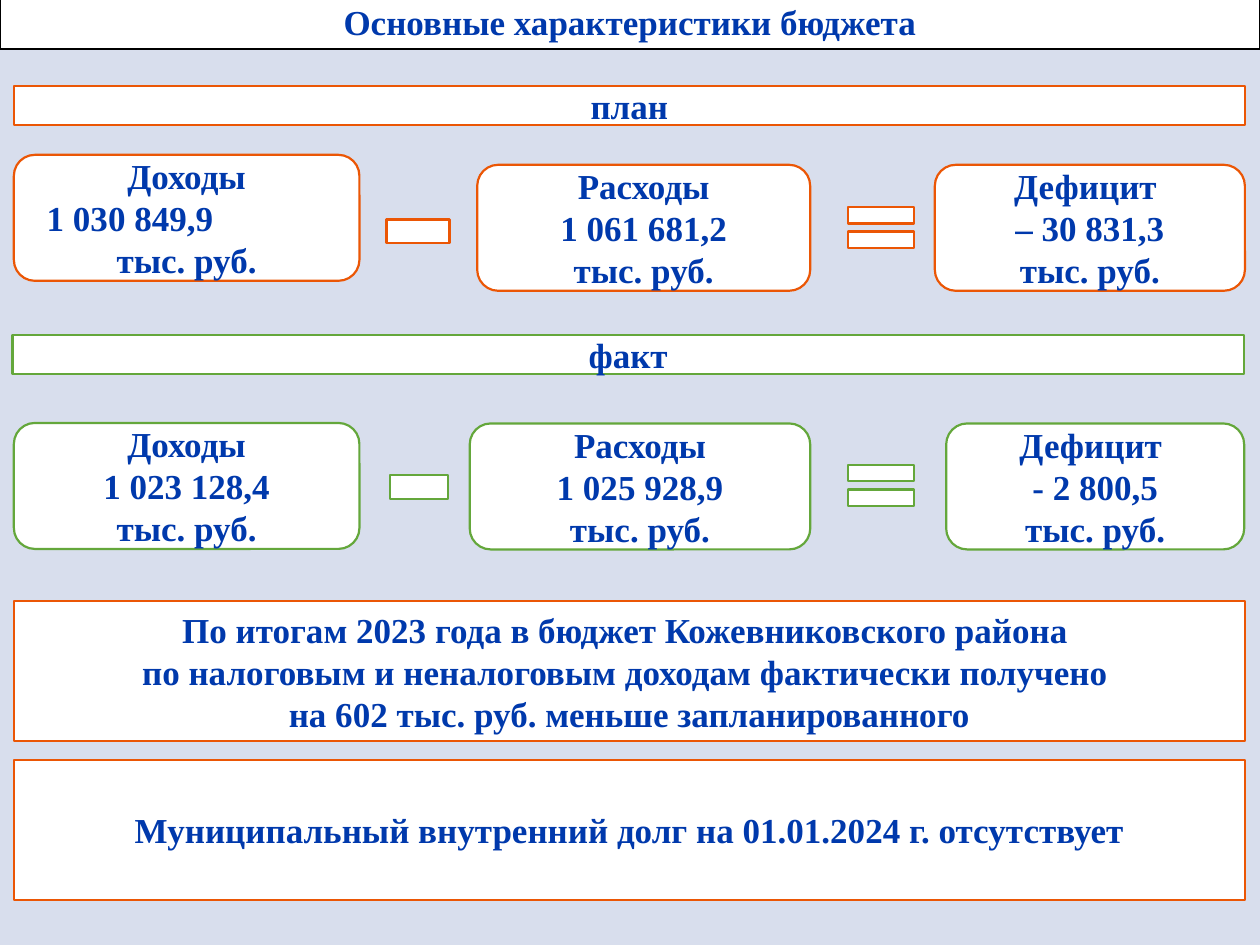
from pptx import Presentation
from pptx.dml.color import RGBColor
from pptx.enum.shapes import MSO_SHAPE as Kind
from pptx.enum.text import MSO_ANCHOR, PP_ALIGN
from pptx.util import Pt

BLACK = RGBColor(0x00, 0x00, 0x00)
WHITE = RGBColor(0xFF, 0xFF, 0xFF)
BACK = RGBColor(0xD8, 0xDE, 0xED)
BLUE = RGBColor(0x00, 0x39, 0xAC)
RED = RGBColor(0xEB, 0x56, 0x05)
GREEN = RGBColor(0x64, 0xA7, 0x3B)

LEFT, WIDE = 7.9, 703.5
BAR, CARD, NOTE = 22.3, 72, 80
UNIT = "тыс. руб."

TITLE = "Основные характеристики бюджета"
PARTS = [
    {
        "name": "план", "color": RED, "left": 7.9, "top": 49,
        "cards": [
            (7.9, 88.5, 197.5, "Доходы", "1 030 849,9"),
            (272.7, 94.2, 190.3, "Расходы", "1 061 681,2"),
            (534.2, 94.2, 177.2, "Дефицит ", "– 30 831,3"),
        ],
        "signs": [
            (Kind.MATH_MINUS, 214.4, 103.7, 49, 56.9),
            (Kind.MATH_EQUAL, 478, 110.2, 51.2, 39.6),
        ],
    },
    {
        "name": "факт", "color": GREEN, "left": 7.2, "top": 191.5,
        "cards": [
            (7.9, 241.7, 197.5, "Доходы", "1 023 128,4"),
            (268.4, 242, 194.6, "Расходы", "1 025 928,9"),
            (540.7, 242, 170.3, "Дефицит ", "- 2 800,5"),
        ],
        "signs": [
            (Kind.MATH_MINUS, 216.7, 249.8, 45.4, 56.9),
            (Kind.MATH_EQUAL, 478, 257.6, 51.2, 39.6),
        ],
    },
]
NOTES = [
    (343.5, ["По итогам 2023 года в бюджет Кожевниковского района ",
             "по налоговым и неналоговым доходам фактически получено ",
             "на 602 тыс. руб. меньше запланированного"]),
    (434.2, ["Муниципальный внутренний долг на 01.01.2024 г. отсутствует"]),
]

deck = Presentation()
deck.slide_width, deck.slide_height = Pt(720), Pt(540)
slide = deck.slides.add_slide(deck.slide_layouts[6])
slide.background.fill.solid()
slide.background.fill.fore_color.rgb = BACK


def draw(kind, left, top, width, height, color, lines=()):
    shape = slide.shapes.add_shape(kind, Pt(left), Pt(top), Pt(width), Pt(height))
    shape.shadow.inherit = False
    shape.fill.solid()
    shape.fill.fore_color.rgb = WHITE
    shape.line.color.rgb = color
    shape.line.width = Pt(1.25)
    if lines:
        frame = shape.text_frame
        frame.text = "\n".join(lines)
        frame.word_wrap = True
        frame.vertical_anchor = MSO_ANCHOR.MIDDLE
        for para in frame.paragraphs:
            para.alignment = PP_ALIGN.CENTER
            for run in para.runs:
                font = run.font
                font.name, font.size, font.bold = "Times New Roman", Pt(20), True
                font.color.rgb = BLUE
    return shape


draw(Kind.RECTANGLE, 0, -3.6, 720, 31.5, BLACK, [TITLE])

cards = []
for part in PARTS:
    color = part["color"]
    draw(Kind.RECTANGLE, part["left"], part["top"], WIDE, BAR, color, [part["name"]])
    for left, top, width, name, total in part["cards"]:
        cards.append(draw(Kind.ROUNDED_RECTANGLE, left, top, width, CARD, color,
                          [name, total, UNIT]))
    for kind, *place in part["signs"]:
        draw(kind, *place, color)

total = cards[0].text_frame.paragraphs[1]
total.alignment = PP_ALIGN.LEFT
total._p.get_or_add_pPr().set("marL", str(Pt(8.2)))

for top, lines in NOTES:
    draw(Kind.RECTANGLE, LEFT, top, WIDE, NOTE, RED, lines)

deck.save("out.pptx")
